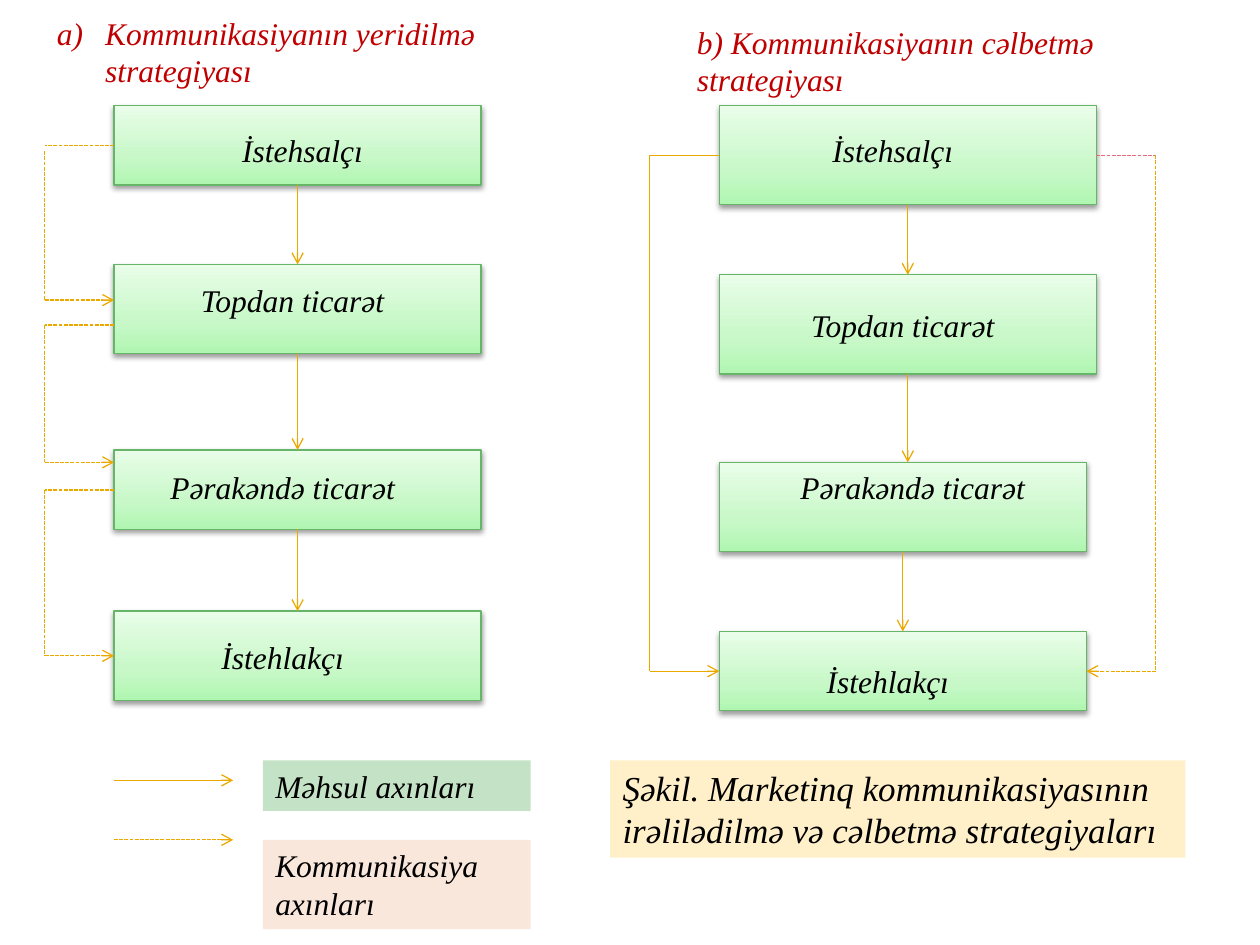
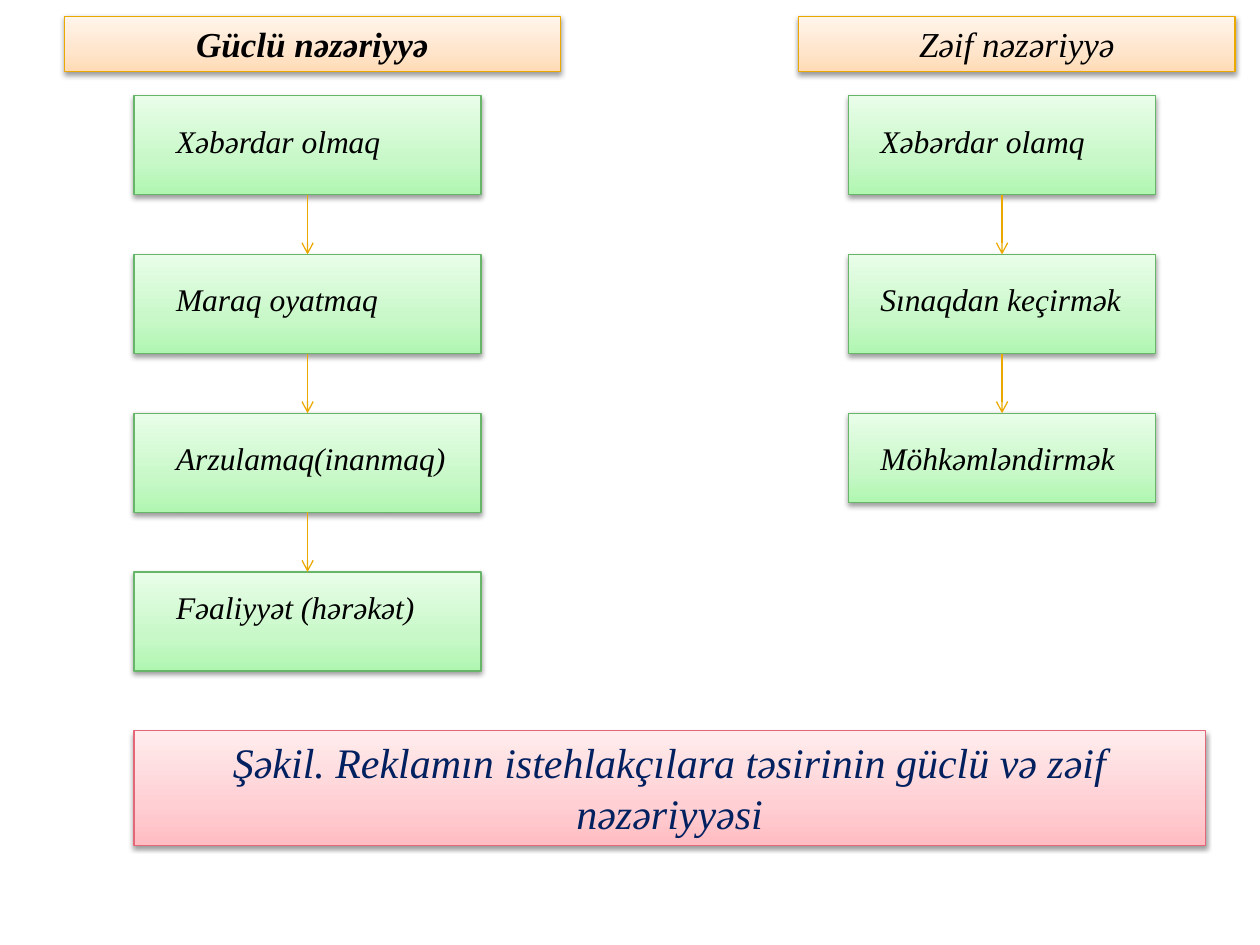
from typing import Any, NamedTuple

import pptx
import pptx.dml.color
import pptx.enum.dml
import pptx.enum.shapes
import pptx.enum.text
import pptx.oxml.ns
import pptx.util
from lxml import etree

Cm = pptx.util.Cm
Pt = pptx.util.Pt
qn = pptx.oxml.ns.qn

FONT = "Times New Roman"
BLACK, RED, NAVY = "000000", "C00000", "002060"
GOLD, ROSE = "EBA900", "E66C7D"
LEFT = pptx.enum.text.PP_ALIGN.LEFT
MID = pptx.enum.text.PP_ALIGN.CENTER
SIDE = {"top": 0, "left": 1, "bottom": 2, "right": 3}


class Tone(NamedTuple):
    """Gradient from the bottom edge upwards, and the outline."""
    low: str
    mid: str
    high: str
    edge: str


GREEN = Tone("B0F6B1", "C8F8C8", "E9FDE9", "67B569")
PINK = Tone("FFBCC2", "FFCFD3", "FFEDEE", "E46778")
PEACH = Tone("FFDBB5", "FFE5CB", "FFF5EB", GOLD)


class Area(NamedTuple):
    """Left, top, width and height in centimetres."""
    x: float
    y: float
    w: float
    h: float


class Step(NamedTuple):
    """A box of a chain, and the place of its label."""
    text: str
    box: Area
    label: Area


class Port(NamedTuple):
    """An end of a line; with a shape, it is the middle of one side."""
    x: int
    y: int
    shape: Any = None
    side: int = 0


def hue(code: str) -> pptx.dml.color.RGBColor:
    return pptx.dml.color.RGBColor.from_string(code)


def spot(x: float, y: float) -> Port:
    return Port(Cm(x), Cm(y))


def port(shape: Any, name: str) -> Port:
    x = shape.left + shape.width // 2
    y = shape.top + shape.height // 2
    x = {"left": shape.left, "right": shape.left + shape.width}.get(name, x)
    y = {"top": shape.top, "bottom": shape.top + shape.height}.get(name, y)
    return Port(x, y, shape, SIDE[name])


def write(shape: Any, text: str, size: int = 18, color: str = BLACK,
          align: Any = LEFT, bold: bool = False) -> None:
    """Fill the shape with text, one paragraph a line."""
    frame = shape.text_frame
    frame.word_wrap = True
    frame.vertical_anchor = pptx.enum.text.MSO_ANCHOR.TOP
    frame.text = text
    for para in frame.paragraphs:
        para.alignment = align
        font = para.font
        for run in para.runs:
            font = run.font
            font.name, font.size = FONT, Pt(size)
            font.bold, font.italic = bold, True
            font.color.rgb = hue(color)


def note(slide: Any, area: Area, text: str, fill: str = "", **style: Any) -> Any:
    shape = slide.shapes.add_textbox(*map(Cm, area))
    if fill:
        shape.fill.solid()
        shape.fill.fore_color.rgb = hue(fill)
    write(shape, text, **style)
    return shape


def block(slide: Any, area: Area, tone: Tone = GREEN) -> Any:
    """Draw a shaded rectangle with a soft shadow."""
    shape = slide.shapes.add_shape(
        pptx.enum.shapes.MSO_SHAPE.RECTANGLE, *map(Cm, area))
    shape.line.color.rgb = hue(tone.edge)
    shape.line.width = Pt(0.75)
    shape.fill.gradient()
    shape.fill.gradient_angle = 90
    props = shape.element.spPr
    stops = props.find(".//" + qn("a:gsLst"))
    for stop in list(stops):
        stops.remove(stop)
    for place, code in zip((0, 35000, 100000), tone):
        stop = etree.SubElement(stops, qn("a:gs"), pos=str(place))
        etree.SubElement(stop, qn("a:srgbClr"), val=code)
    shape.shadow.inherit = False
    shade = etree.SubElement(
        props.find(qn("a:effectLst")), qn("a:outerShdw"),
        blurRad=str(Pt(3.1)), dist=str(Pt(1.6)), dir="5400000", rotWithShape="0")
    ink = etree.SubElement(shade, qn("a:srgbClr"), val=BLACK)
    etree.SubElement(ink, qn("a:alpha"), val="38000")
    return shape


def wire(slide: Any, start: Port, end: Port, color: str = GOLD,
         dash: bool = False, arrow: bool = True) -> None:
    line = slide.shapes.add_connector(
        pptx.enum.shapes.MSO_CONNECTOR.STRAIGHT, start.x, start.y, end.x, end.y)
    if start.shape is not None:
        line.begin_connect(start.shape, start.side)
    if end.shape is not None:
        line.end_connect(end.shape, end.side)
    line.line.color.rgb = hue(color)
    line.line.width = Pt(0.75)
    if dash:
        line.line.dash_style = pptx.enum.dml.MSO_LINE.SQUARE_DOT
    props = line.element.spPr
    if arrow:
        etree.SubElement(props.find(qn("a:ln")), qn("a:tailEnd"), type="arrow")
    etree.SubElement(props, qn("a:effectLst"))


def loop(slide: Any, start: Port, end: Port, x: float, dash: bool = True,
         first: str = GOLD, gap: float = 0) -> None:
    """Go out to x, along it, and back; gap shortens the middle part."""
    out = Cm(x)
    wire(slide, start, Port(out, start.y), first, dash, False)
    wire(slide, Port(out, start.y + Cm(gap)), Port(out, end.y), GOLD, dash, False)
    wire(slide, Port(out, end.y), end, GOLD, dash)


def chain(slide: Any, steps: list[Step], align: Any = LEFT) -> list[Any]:
    """Draw labelled boxes joined downwards by straight arrows."""
    boxes = [block(slide, step.box) for step in steps]
    for step in steps:
        note(slide, step.label, step.text, align=align)
    for upper, lower in zip(boxes, boxes[1:]):
        start, end = port(upper, "bottom"), port(lower, "top")
        if start.x != end.x:
            end = Port(start.x, end.y)
        wire(slide, start, end)
    return boxes


def indent(shape: Any) -> None:
    """Letter the first paragraph and align the others with its text."""
    for i, para in enumerate(shape.text_frame.paragraphs):
        props = para._p.get_or_add_pPr()
        props.set("marL", str(Cm(0.97)))
        props.set("indent", str(0 if i else -Cm(0.97)))
        if i == 0:
            etree.SubElement(props, qn("a:buAutoNum"), type="alphaLcParenR")


def flows(slide: Any) -> None:
    """Push and pull strategies side by side."""
    names = ["İstehsalçı", "Topdan ticarət", "Pərakəndə ticarət", "İstehlakçı"]
    # top and height of the box, then left, top and width of the label
    push = [(2.13, 1.6, 3.1, 2.51, 6), (5.33, 1.8, 3.1, 5.54, 5.6),
            (9.07, 1.6, 2.7, 9.32, 6), (12.32, 1.8, 2.7, 12.73, 6)]
    pull = [(2.13, 2, 15.3, 2.51, 5.4), (5.54, 2, 15.3, 6.05, 5.8),
            (9.32, 1.8, 15.3, 9.32, 6.2), (12.73, 1.6, 15.1, 13.23, 5.6)]
    wide = [7.6, 7.6, 7.4, 7.4]

    def steps(x: float, widths: list[float], rows: list[tuple]) -> list[Step]:
        return [Step(name, Area(x, y, w, h), Area(lx, ly, lw, 1.02))
                for name, w, (y, h, lx, ly, lw) in zip(names, widths, rows)]

    boxes = chain(slide, steps(2.3, [7.4] * 4, push), MID)
    loop(slide, port(boxes[0], "left"), spot(2.3, 6.05), 0.9, gap=0.12)
    loop(slide, spot(2.3, 6.55), spot(2.3, 9.32), 0.9)
    loop(slide, spot(2.3, 9.88), port(boxes[3], "left"), 0.9)

    boxes = chain(slide, steps(14.5, wide, pull), MID)
    loop(slide, port(boxes[0], "left"), port(boxes[3], "left"), 13.1, dash=False)
    loop(slide, port(boxes[0], "right"), port(boxes[3], "right"), 23.3, first=ROSE)

    indent(note(slide, Area(0.9, 0.15, 9.4, 1.8),
                "Kommunikasiyanın yeridilmə\nstrategiyası", color=RED))
    note(slide, Area(13.8, 0.33, 10.5, 1.8),
         "b) Kommunikasiyanın cəlbetmə strategiyası", color=RED)

    for y, dash in ((15.73, False), (16.93, True)):
        wire(slide, spot(2.3, y), spot(4.7, y), dash=dash)
    note(slide, Area(5.3, 15.33, 5.4, 1.02), "Məhsul axınları", "C4E2C5")
    note(slide, Area(5.3, 16.93, 5.4, 1.8), "Kommunikasiya axınları", "FAE7DC")
    note(slide, Area(12.3, 15.33, 11.6, 1.96),
         "Şəkil. Marketinq kommunikasiyasının irəlilədilmə və cəlbetmə strategiyaları",
         "FFF0C9", size=20)


def views(slide: Any) -> None:
    """Strong and weak theories of advertising."""
    top, pitch = 1.93, 3.2
    # text, box height, label drop and label width
    strong = [("Xəbərdar olmaq", 2, 0.4, 5.6), ("Maraq oyatmaq", 2, 0.4, 4.8),
              ("Arzulamaq(inanmaq)", 2, 0.4, 6), ("Fəaliyyət (hərəkət)", 2, 0.2, 6)]
    weak = [("Xəbərdar olamq", 2, 0.4, 5.4), ("Sınaqdan keçirmək", 2, 0.4, 5.4),
            ("Möhkəmləndirmək", 1.8, 0.4, 5.4)]
    for x, w, inset, rows in ((2.7, 7, 0.6, strong), (17.1, 6.2, 0.4, weak)):
        chain(slide, [
            Step(text, Area(x, top + i * pitch, w, h),
                 Area(x + inset, top + i * pitch + drop, lw, 1.02))
            for i, (text, h, drop, lw) in enumerate(rows)])

    write(block(slide, Area(2.7, 14.73, 21.6, 2.31), PINK),
          "Şəkil. Reklamın istehlakçılara təsirinin güclü və zəif nəzəriyyəsi",
          size=24, color=NAVY, align=MID)
    for x, w, text, bold in ((1.3, 10, "Güclü nəzəriyyə", True),
                             (16.1, 8.8, "Zəif nəzəriyyə", False)):
        write(block(slide, Area(x, 0.33, w, 1.11), PEACH), text,
              size=20, align=MID, bold=bold)


def main() -> None:
    deck = pptx.Presentation()
    deck.slide_width, deck.slide_height = Cm(25.4), Cm(19.05)
    for draw in (flows, views):
        draw(deck.slides.add_slide(deck.slide_layouts[6]))
    deck.save("out.pptx")


if __name__ == "__main__":
    main()
